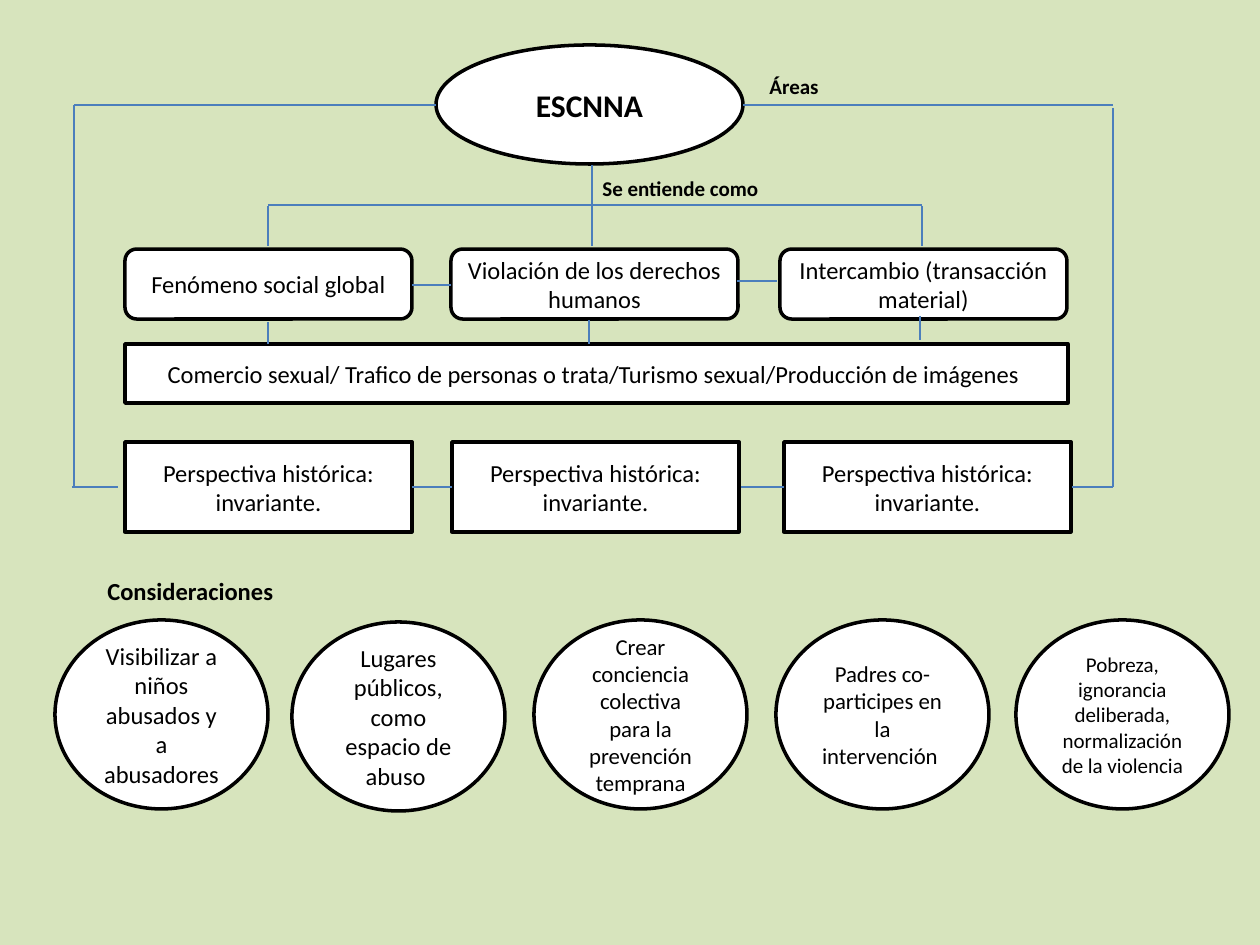
from pptx import Presentation
from pptx import util as u
from pptx.dml.color import RGBColor
from pptx.enum import shapes, text
from pptx.oxml.ns import qn
from lxml import etree

EMU_PER_PX = 914400 / 126


def px(n):
    return u.Emu(round(n * EMU_PER_PX))


def rgb(value):
    return RGBColor.from_string(value)


class Diagram:
    font, ink, paper, wire = "Calibri", "000000", "FFFFFF", "4B7EBC"

    def __init__(self, slide):
        self.s = slide

    def background(self, color):
        fill = self.s.background.fill
        fill.solid()
        fill.fore_color.rgb = rgb(color)

    def run(self, p, words, size, bold=False):
        r = p.add_run()
        r.text = words
        r.font.name, r.font.size, r.font.bold = self.font, u.Pt(size), bold
        r.font.color.rgb = rgb(self.ink)

    def node(self, kind, x, y, w, h, words, size=14, bold=False):
        sp = self.s.shapes.add_shape(kind, px(x), px(y), px(w), px(h))
        sp.shadow.inherit = False
        sp.fill.solid()
        sp.fill.fore_color.rgb = rgb(self.paper)
        sp.line.color.rgb = rgb(self.ink)
        sp.line.width = u.Pt(2)
        tf = sp.text_frame
        tf.word_wrap = True
        tf.vertical_anchor = text.MSO_ANCHOR.MIDDLE
        p = tf.paragraphs[0]
        p.alignment = text.PP_ALIGN.CENTER
        self.run(p, words, size, bold)

    def label(self, x, y, w, h, *runs):
        tf = self.s.shapes.add_textbox(px(x), px(y), px(w), px(h)).text_frame
        tf.word_wrap = True
        tf.auto_size = text.MSO_AUTO_SIZE.SHAPE_TO_FIT_TEXT
        for r in runs:
            self.run(tf.paragraphs[0], *r)

    def line(self, x1, y1, x2, y2):
        c = self.s.shapes.add_connector(
            shapes.MSO_CONNECTOR.STRAIGHT, px(x1), px(y1), px(x2), px(y2))
        c.line.color.rgb = rgb(self.wire)
        c.line.width = u.Pt(0.75)
        etree.SubElement(c._element.spPr, qn("a:effectLst"))


def main():
    prs = Presentation()
    prs.slide_width, prs.slide_height = u.Inches(10), u.Inches(7.5)
    d = Diagram(prs.slides.add_slide(prs.slide_layouts[6]))
    d.background("D7E4BD")
    shape = shapes.MSO_SHAPE

    # Main concept
    d.node(shape.OVAL, 436, 45, 307, 119, "ESCNNA", 18, True)

    # Definitions
    definitions = ["Fenómeno social global", "Violación de los derechos humanos",
                   "Intercambio (transacción material)"]
    for x, words in zip((125, 451, 780), definitions):
        d.node(shape.ROUNDED_RECTANGLE, x, 249, 287, 70, words)

    # Perspectives
    for x in (125, 452, 784):
        d.node(shape.RECTANGLE, x, 442, 287, 90, "Perspectiva histórica: invariante.")

    # Branches from the concept to the definitions
    d.line(268, 205, 922, 205)
    d.line(592, 165, 592, 205)
    for x in (268, 592, 922):
        d.line(x, 206, x, 246)

    # Outer loop from the concept to the perspectives
    d.line(436, 105, 74, 105)
    d.line(1113, 105, 743, 105)
    d.line(1113, 108, 1113, 487)
    d.line(74, 105, 74, 487)

    # Links along the rows
    for x1, x2, y in ((72, 118, 487), (412, 452, 487), (741, 784, 487),
                      (1072, 1113, 487), (412, 451, 285), (737, 777, 281)):
        d.line(x1, y, x2, y)

    # Forms of exploitation
    d.node(shape.RECTANGLE, 125, 344, 943, 59,
           "Comercio sexual/ Trafico de personas o trata/Turismo sexual/"
           "Producción de imágenes ")
    for x, y1, y2 in ((268, 322, 344), (589, 320, 344), (920, 316, 340)):
        d.line(x, y1, x, y2)

    # Considerations
    considerations = [
        (55, 620, 14, "Visibilizar a niños abusados y a abusadores"),
        (292, 622, 14, "Lugares públicos, como espacio de abuso "),
        (534, 620, 13, "Crear conciencia colectiva para la prevención temprana"),
        (776, 620, 13, "Padres co-participes en la intervención "),
        (1016, 620, 12, "Pobreza, ignorancia deliberada, normalización de la violencia "),
    ]
    for x, y, size, words in considerations:
        d.node(shape.OVAL, x, y, 213, 189, words, size)

    # Labels
    d.label(590, 169, 256, 38, ("Se entiende como", 12, True))
    d.label(757, 57, 88, 50, ("Áreas", 12, True), (" ", 18))
    d.label(95, 570, 440, 43, ("Consideraciones", 14, True))

    prs.save("out.pptx")


if __name__ == "__main__":
    main()
